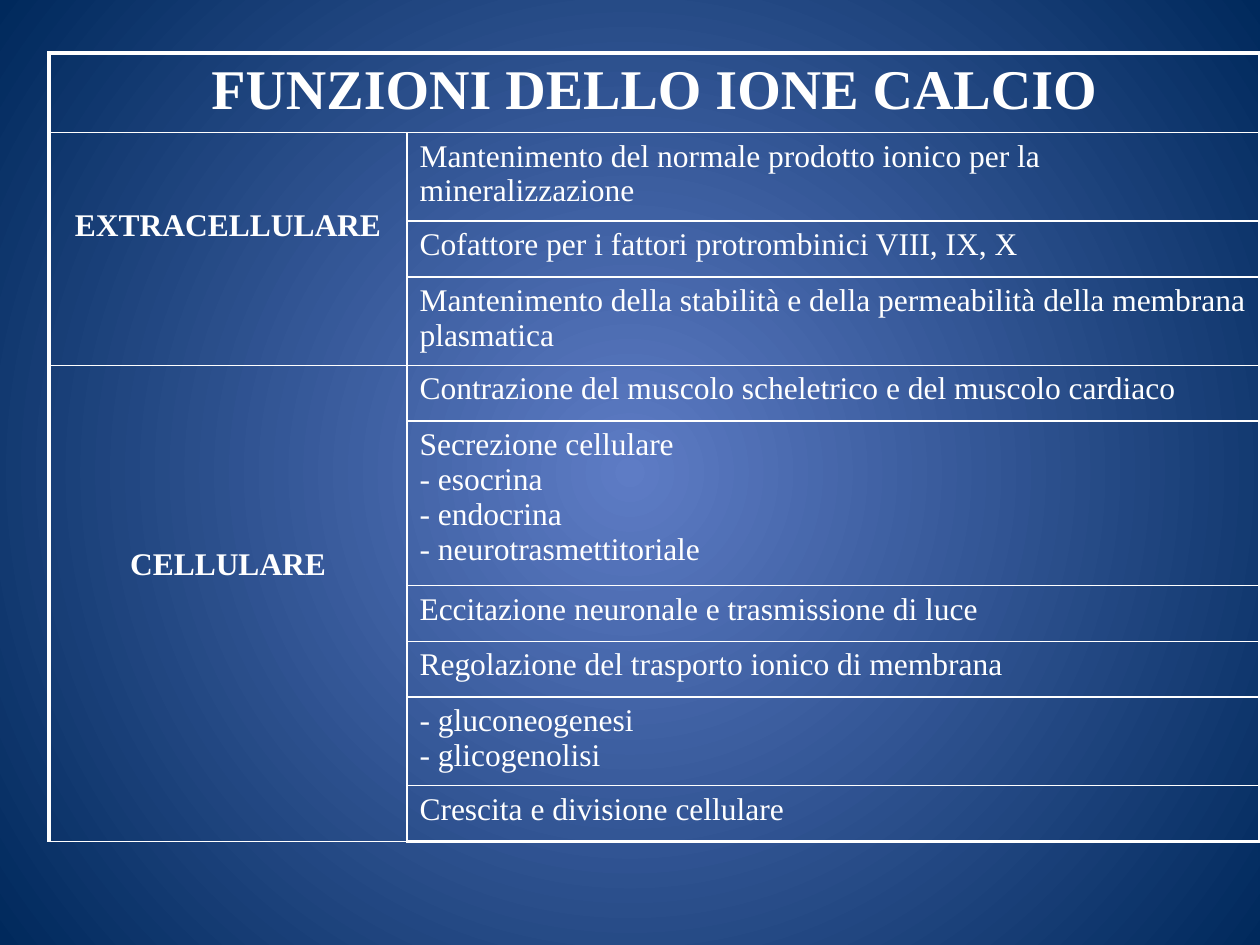
from lxml.etree import SubElement
from pptx import Presentation
from pptx.dml.color import RGBColor as RGB
from pptx.enum.text import PP_ALIGN as Align, MSO_ANCHOR as Anchor
from pptx.oxml.ns import qn
from pptx.util import Inches, Pt

COLORS = {"centre": "5E7CC5", "edge": "00295C", "ink": "FFFFFF"}
FONT = "Times New Roman"
THIN, THICK = 1, 2.25
TITLE = "FUNZIONI DELLO IONE CALCIO"
GROUPS = [
    ("EXTRACELLULARE", 0.6, [
        "Mantenimento del normale prodotto ionico per la mineralizzazione",
        "Cofattore per i fattori protrombinici VIII, IX, X",
        "Mantenimento della stabilità e della permeabilità della membrana plasmatica",
    ]),
    ("CELLULARE", 1.44, [
        "Contrazione del muscolo scheletrico e del muscolo cardiaco",
        "Secrezione cellulare\n- esocrina\n- endocrina\n- neurotrasmettitoriale",
        "Eccitazione neuronale e trasmissione di luce",
        "Regolazione del trasporto ionico di membrana",
        "- gluconeogenesi\n- glicogenolisi",
        "Crescita e divisione cellulare",
    ]),
]
COL_SHARES = [2.84, 6.77]
ROW_SHARES = [0.63, 0.7, 0.44, 0.7, 0.44, 1.3, 0.44, 0.44, 0.7, 0.44]


def paint_background(s):
    fill = s.background.fill
    fill.gradient()
    for stop, name in zip(fill.gradient_stops, ("centre", "edge")):
        stop.color.rgb = RGB.from_string(COLORS[name])
    grad = next(s._element.iter(qn("a:gradFill")))
    grad.remove(grad.find(qn("a:lin")))
    path = SubElement(grad, qn("a:path"), path="circle")
    SubElement(path, qn("a:fillToRect"), dict.fromkeys("ltrb", "50000"))


def write(cell, text, size=18, bold=False, align=Align.LEFT, top=0.05):
    cell.margin_top = Inches(top)
    cell.vertical_anchor = Anchor.TOP
    p = cell.text_frame.paragraphs[0]
    p.alignment = align
    for i, line in enumerate(text.split("\n")):
        if i:
            p.add_line_break()
        r = p.add_run()
        r.text = line
        r.font.name, r.font.size, r.font.bold = FONT, Pt(size), bold
        r.font.color.rgb = RGB.from_string(COLORS["ink"])


def frame(cell, outer):
    tc_pr = cell._tc.get_or_add_tcPr()
    for side in "LRTB":
        width = THICK if side in outer else THIN
        ln = SubElement(tc_pr, qn(f"a:ln{side}"), w=str(Pt(width)))
        solid = SubElement(ln, qn("a:solidFill"))
        SubElement(solid, qn("a:srgbClr"), val=COLORS["ink"])
    cell.fill.background()


def add_function_table(s, left, top, width, height):
    rows, cols = len(ROW_SHARES), len(COL_SHARES)
    table = s.shapes.add_table(rows, cols, left, top, width, height).table
    table.first_row = table.horz_banding = False
    for tracks, shares, length, attr in (
        (table.columns, COL_SHARES, width, "width"),
        (table.rows, ROW_SHARES, height, "height"),
    ):
        for track, share in zip(tracks, shares):
            setattr(track, attr, int(length * share / sum(shares)))

    for y in range(rows):
        for x in range(cols):
            edges = {"L": x == 0, "R": x == cols - 1, "T": y == 0, "B": y == rows - 1}
            if y == 0:
                edges["L"] = edges["R"] = True
            frame(table.cell(y, x), [side for side, on in edges.items() if on])

    table.cell(0, 0).merge(table.cell(0, cols - 1))
    write(table.cell(0, 0), TITLE, 32, True, Align.CENTER)
    y = 1
    for label, label_top, functions in GROUPS:
        table.cell(y, 0).merge(table.cell(y + len(functions) - 1, 0))
        write(table.cell(y, 0), label, bold=True, align=Align.CENTER, top=label_top)
        for text in functions:
            write(table.cell(y, 1), text)
            y += 1


def main():
    prs = Presentation()
    prs.slide_width, prs.slide_height = Inches(10), Inches(7.5)
    s = prs.slides.add_slide(prs.slide_layouts[6])
    paint_background(s)
    add_function_table(s, Inches(0.39), Inches(0.42), Inches(9.61), Inches(6.26))
    prs.save("out.pptx")


if __name__ == "__main__":
    main()
